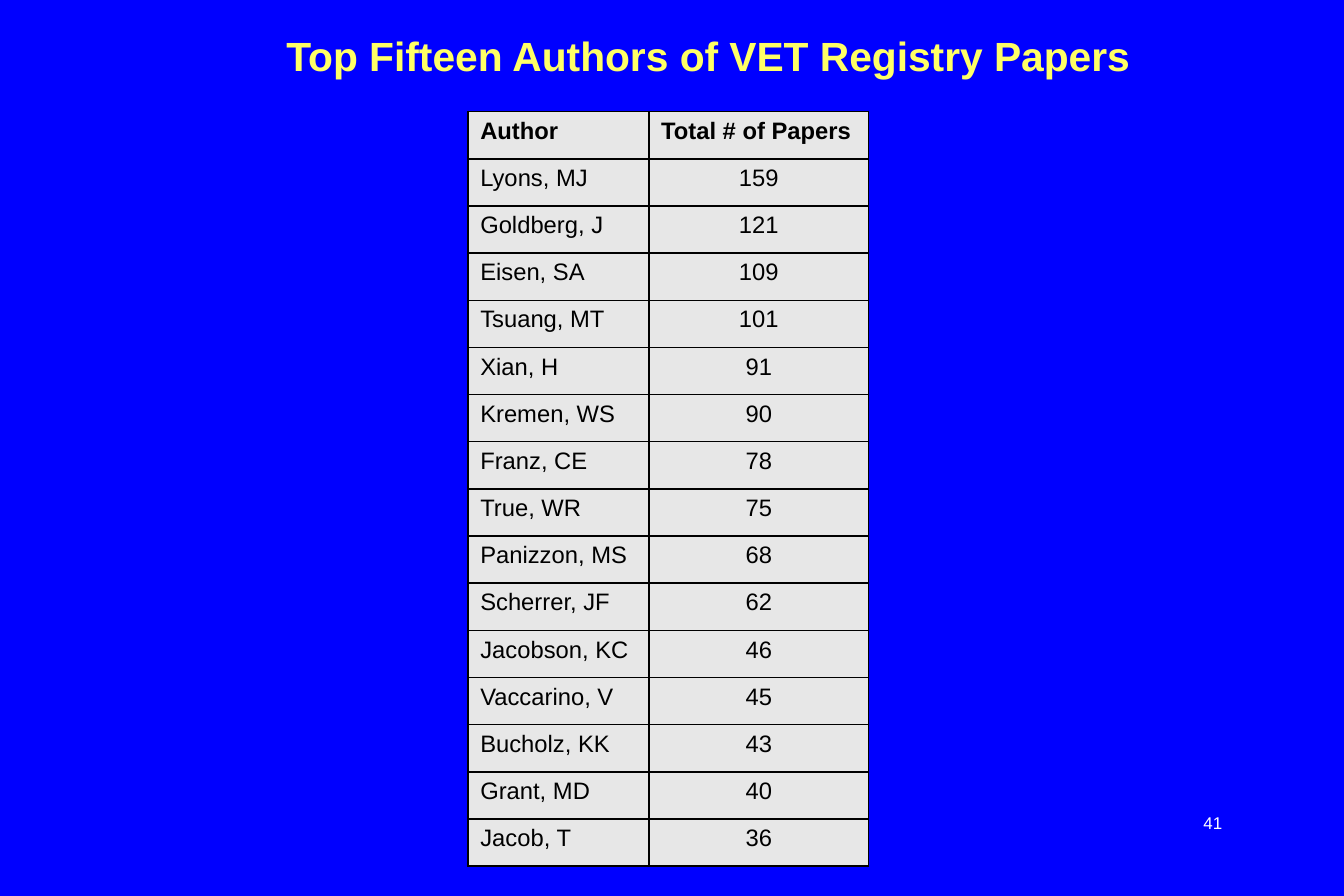
from pptx import Presentation
from pptx.dml.color import RGBColor
from pptx.enum.text import MSO_ANCHOR, PP_ALIGN
from pptx.oxml import parse_xml
from pptx.oxml.ns import nsdecls
from pptx.util import Cm, Pt

BLUE = RGBColor(0x00, 0x00, 0xFF)
YELLOW = RGBColor(0xFF, 0xFF, 0x66)
WHITE = RGBColor(0xFF, 0xFF, 0xFF)
BLACK = RGBColor(0x00, 0x00, 0x00)
GREY = RGBColor(0xE7, 0xE7, 0xE7)

FONT = "Arial"
HEADINGS = ("Author", "Total # of Papers")
AUTHORS = (
    ("Lyons, MJ", 159),
    ("Goldberg, J", 121),
    ("Eisen, SA", 109),
    ("Tsuang, MT", 101),
    ("Xian, H", 91),
    ("Kremen, WS", 90),
    ("Franz, CE", 78),
    ("True, WR", 75),
    ("Panizzon, MS", 68),
    ("Scherrer, JF", 62),
    ("Jacobson, KC", 46),
    ("Vaccarino, V", 45),
    ("Bucholz, KK", 43),
    ("Grant, MD", 40),
    ("Jacob, T", 36),
)
COLUMN_WIDTHS = (Cm(3.76), Cm(4.57))
ROW_HEIGHT = Cm(0.98)


def write(text_frame, text, size, color, bold=False, align=PP_ALIGN.LEFT):
    """Put one formatted paragraph into a text frame."""
    text_frame.text = text
    paragraph = text_frame.paragraphs[0]
    paragraph.alignment = align
    font = paragraph.runs[0].font
    font.name = FONT
    font.size = Pt(size)
    font.bold = bold
    font.color.rgb = color


def add_text(page, left, top, width, height):
    """Add a wrapping text box, centred vertically, and return its frame."""
    box = page.shapes.add_textbox(left, top, width, height)
    box.text_frame.word_wrap = True
    return box.text_frame


def add_borders(cell):
    """Draw a thin black line on each side of a cell."""
    properties = cell._tc.get_or_add_tcPr()
    for position, side in enumerate(("lnL", "lnR", "lnT", "lnB")):
        line = parse_xml(
            f'<a:{side} {nsdecls("a")} w="{Pt(1)}"><a:solidFill>'
            f'<a:srgbClr val="{BLACK}"/></a:solidFill></a:{side}>'
        )
        properties.insert(position, line)


def fill_cell(cell, text, bold, align):
    """Write, shade and outline one table cell."""
    write(cell.text_frame, text, 14, BLACK, bold, align)
    cell.fill.solid()
    cell.fill.fore_color.rgb = GREY
    add_borders(cell)


def add_author_table(page):
    """Add the table of authors and their paper counts."""
    rows = (HEADINGS, *AUTHORS)
    frame = page.shapes.add_table(
        len(rows), len(HEADINGS), Cm(9.73), Cm(2.32),
        sum(COLUMN_WIDTHS), ROW_HEIGHT * len(rows),
    )
    table = frame.table
    for column, width in zip(table.columns, COLUMN_WIDTHS):
        column.width = width
    for row_index, values in enumerate(rows):
        table.rows[row_index].height = ROW_HEIGHT
        is_heading = row_index == 0
        for column_index, value in enumerate(values):
            is_count = column_index == 1 and not is_heading
            align = PP_ALIGN.CENTER if is_count else PP_ALIGN.LEFT
            fill_cell(table.cell(row_index, column_index), str(value), is_heading, align)


def main():
    """Build the slide and save the deck."""
    deck = Presentation()
    deck.slide_width, deck.slide_height = Cm(27.94), Cm(18.62)
    page = deck.slides.add_slide(deck.slide_layouts[6])
    page.background.fill.solid()
    page.background.fill.fore_color.rgb = BLUE

    number = add_text(page, Cm(24.77), Cm(16.76), Cm(1.09), Cm(1.24))
    write(number, "41", 10, WHITE)
    title = add_text(page, Cm(2.97), Cm(0.41), Cm(23.75), Cm(1.47))
    title.vertical_anchor = MSO_ANCHOR.MIDDLE
    write(title, "Top Fifteen Authors of VET Registry Papers ", 24, YELLOW, True, PP_ALIGN.CENTER)
    add_author_table(page)

    deck.save("out.pptx")


if __name__ == "__main__":
    main()
